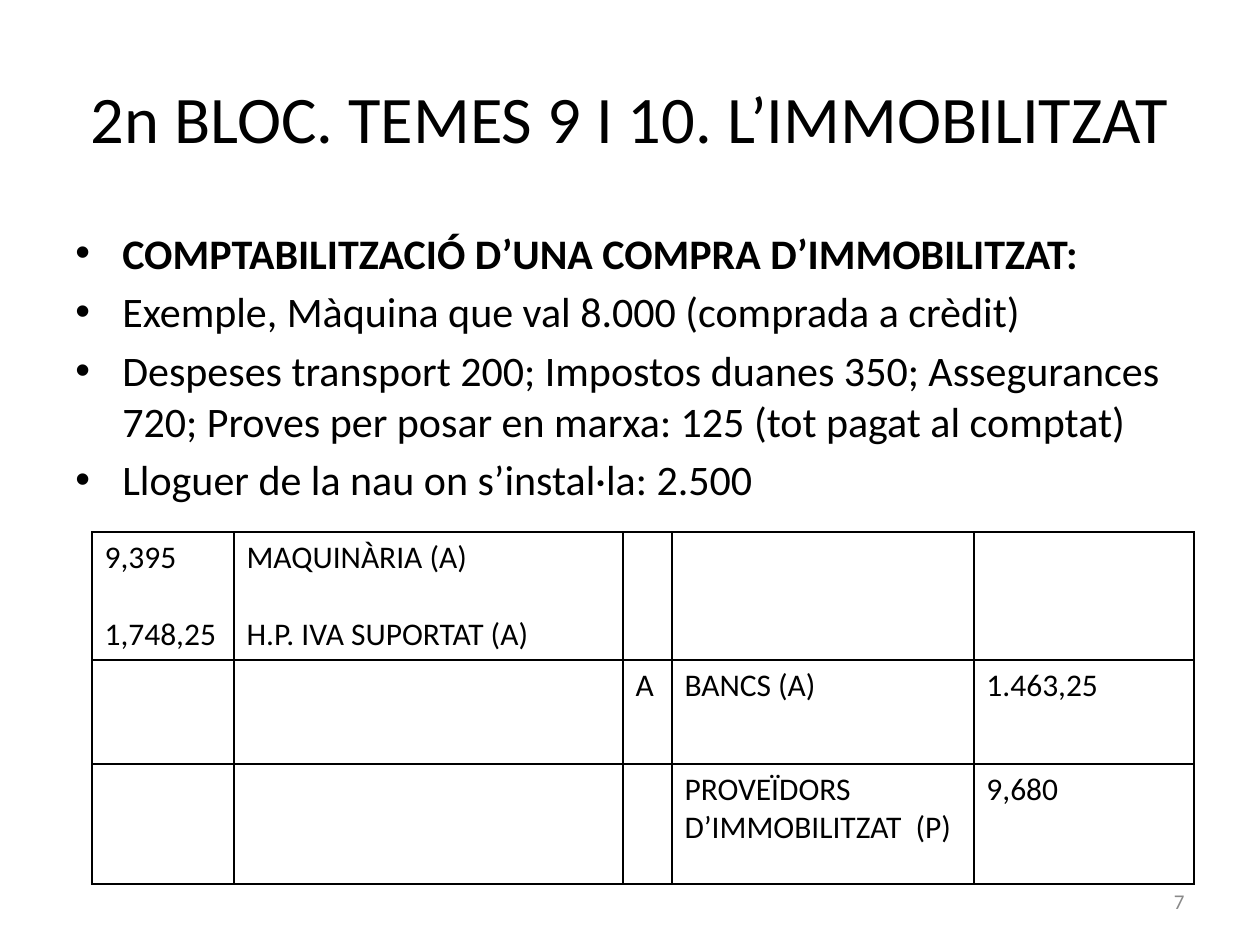
from lxml.etree import SubElement
from pptx import Presentation
from pptx.dml.color import RGBColor
from pptx.enum.text import MSO_ANCHOR as Anchor, PP_ALIGN as Align
from pptx.oxml.ns import qn
from pptx.util import Pt

PX = 914400 / 126
BLACK = "000000"


def px(*lengths):
    """Turn px lengths into EMU."""
    return [round(length * PX) for length in lengths]


def format_runs(paragraph, size, color=BLACK, bold=False):
    for run in paragraph.runs:
        run.font.name = "Calibri"
        run.font.size = Pt(size)
        run.font.bold = bold
        run.font.color.rgb = RGBColor.from_string(color)


presentation = Presentation()
presentation.slide_width, presentation.slide_height = px(1260, 945)
slide = presentation.slides.add_slide(presentation.slide_layouts[5])

# Title
title = slide.shapes.title
title.left, title.top, title.width, title.height = px(63, 38, 1134, 157)
title.text_frame.text = "2n BLOC. TEMES 9 I 10. L’IMMOBILITZAT"
title.text_frame.vertical_anchor = Anchor.MIDDLE
title.text_frame.paragraphs[0].alignment = Align.CENTER
format_runs(title.text_frame.paragraphs[0], 38)

# Example data
example_lines = [
    "COMPTABILITZACIÓ D’UNA COMPRA D’IMMOBILITZAT:",
    "Exemple, Màquina que val 8.000 (comprada a crèdit)",
    "Despeses transport 200; Impostos duanes 350; Assegurances 720; "
    "Proves per posar en marxa: 125 (tot pagat al comptat)",
    "Lloguer de la nau on s’instal·la: 2.500",
]
example = slide.shapes.add_textbox(*px(63, 221, 1134, 624)).text_frame
example.word_wrap = True
example.text = "\n".join(example_lines)
indent = px(47)[0]
for number, paragraph in enumerate(example.paragraphs):
    format_runs(paragraph, 24, bold=number == 0)
    if number:
        paragraph.space_before = Pt(4.8)
    properties = paragraph._p.get_or_add_pPr()
    properties.set("marL", str(indent))
    properties.set("indent", str(-indent))
    SubElement(properties, qn("a:buFont"), typeface="Arial")
    SubElement(properties, qn("a:buChar"), char="•")

# Journal entry: debit amount, debit account, "A", credit account, credit amount
entries = [
    ["9,395\n1,748,25", "MAQUINÀRIA (A)\nH.P. IVA SUPORTAT (A)", "", "", ""],
    ["", "", "A", "BANCS (A)", "1.463,25"],
    ["", "", "", "PROVEÏDORS D’IMMOBILITZAT  (P)", "9,680"],
]
column_widths = px(142, 389, 49, 302, 220)
row_heights = px(128, 104, 120)
journal = slide.shapes.add_table(
    len(entries), len(column_widths), *px(92, 532),
    sum(column_widths), sum(row_heights)).table
journal.first_row = False
journal.horz_banding = False
for column, width in zip(journal.columns, column_widths):
    column.width = width
for row, height, texts in zip(journal.rows, row_heights, entries):
    row.height = height
    for cell, text in zip(row.cells, texts):
        cell.text = text
        for number, paragraph in enumerate(cell.text_frame.paragraphs):
            format_runs(paragraph, 18)
            if number:
                paragraph.space_before = Pt(22)
        properties = cell._tc.get_or_add_tcPr()
        for side in ("lnL", "lnR", "lnT", "lnB"):
            border = SubElement(properties, qn(f"a:{side}"), w=str(Pt(1)))
            fill = SubElement(border, qn("a:solidFill"))
            SubElement(fill, qn("a:srgbClr"), val=BLACK)
        cell.fill.background()

# Page number
page_number = slide.shapes.add_textbox(*px(903, 876, 294, 50)).text_frame
page_number.word_wrap = True
page_number.vertical_anchor = Anchor.MIDDLE
page_number.text = "7"
page_number.paragraphs[0].alignment = Align.RIGHT
format_runs(page_number.paragraphs[0], 12, "898989")

presentation.save("out.pptx")
